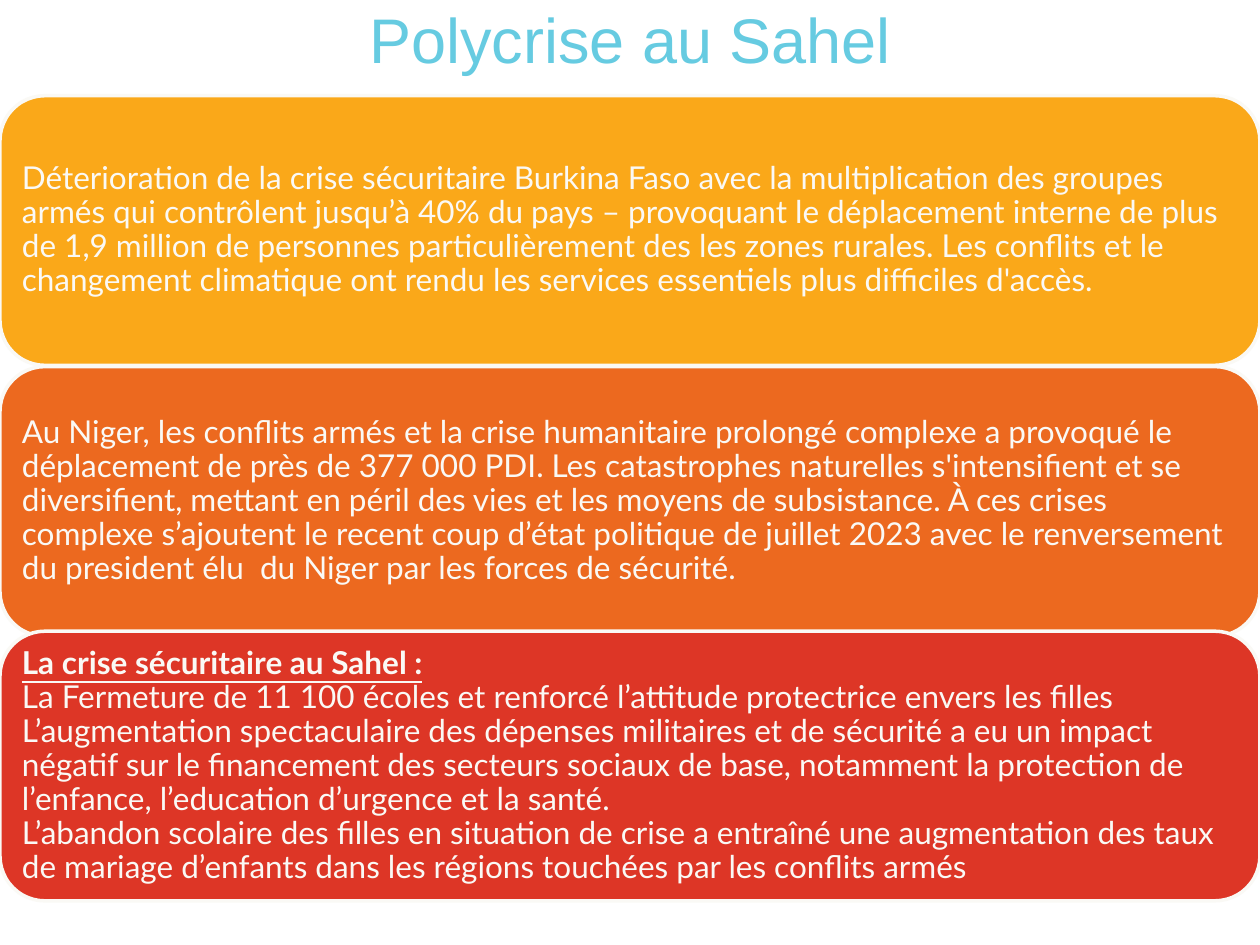
from dataclasses import dataclass

from pptx import Presentation
from pptx.dml.color import RGBColor
from pptx.enum.shapes import MSO_SHAPE
from pptx.enum.text import MSO_ANCHOR, PP_ALIGN
from pptx.util import Inches, Pt


@dataclass(frozen=True)
class Theme:
    title_color: str = "66CBE1"
    light: str = "FAF9F5"
    amber: str = "FAA819"
    orange: str = "EC691F"
    red: str = "DD3626"
    title_font: str = "Arial"
    body_font: str = "Lato"
    title_size: int = 36
    body_size: int = 18
    outline: int = 2


class SlideBuilder:
    def __init__(self, slide, theme):
        self.slide = slide
        self.theme = theme

    def style(self, font, name, size, color):
        font.name = name
        font.size = Pt(size)
        font.color.rgb = RGBColor.from_string(color)

    def title(self, text):
        box = self.slide.shapes.add_textbox(
            Inches(0.74), Inches(-0.16), Inches(8.52), Inches(0.92))
        frame = box.text_frame
        frame.word_wrap = True
        frame.vertical_anchor = MSO_ANCHOR.MIDDLE
        frame.text = text
        heading = frame.paragraphs[0]
        heading.alignment = PP_ALIGN.CENTER
        self.style(heading.runs[0].font, self.theme.title_font,
                   self.theme.title_size, self.theme.title_color)

    def panel(self, top, color, lines, has_heading=False):
        """Draw a full-width rounded panel; a heading is its first line."""
        panel = self.slide.shapes.add_shape(
            MSO_SHAPE.ROUNDED_RECTANGLE,
            Inches(0), Inches(top), Inches(10), Inches(2.14))
        panel.shadow.inherit = False
        panel.fill.solid()
        panel.fill.fore_color.rgb = RGBColor.from_string(color)
        panel.line.color.rgb = RGBColor.from_string(self.theme.light)
        panel.line.width = Pt(self.theme.outline)

        frame = panel.text_frame
        frame.word_wrap = True
        frame.vertical_anchor = MSO_ANCHOR.MIDDLE
        frame.margin_left = frame.margin_right = Inches(0.07)
        frame.margin_top = frame.margin_bottom = Inches(0.07)
        frame.text = "\v".join(lines)
        body = frame.paragraphs[0]
        body.alignment = PP_ALIGN.LEFT
        body.line_spacing = 0.9
        for run in body.runs:
            self.style(run.font, self.theme.body_font,
                       self.theme.body_size, self.theme.light)
        if has_heading:
            heading_font = body.runs[0].font
            heading_font.bold = heading_font.underline = True


BURKINA_FASO = [
    "Déterioration de la crise sécuritaire Burkina Faso avec la multiplication "
    "des groupes armés qui contrôlent jusqu’à 40% du pays – provoquant le "
    "déplacement interne de plus de 1,9 million de personnes particulièrement "
    "des les zones rurales. Les conflits et le changement climatique ont rendu "
    "les services essentiels plus difficiles d'accès.",
]
NIGER = [
    "Au Niger, les conflits armés et la crise humanitaire prolongé complexe a "
    "provoqué le déplacement de près de 377 000 PDI. Les catastrophes "
    "naturelles s'intensifient et se diversifient, mettant en péril des vies "
    "et les moyens de subsistance. À ces crises complexe s’ajoutent le recent "
    "coup d’état politique de juillet 2023 avec le renversement du president "
    "élu  du Niger par les forces de sécurité.",
]
SAHEL = [
    "La crise sécuritaire au Sahel :",
    "La Fermeture de 11 100 écoles et renforcé l’attitude protectrice envers "
    "les filles",
    "L’augmentation spectaculaire des dépenses militaires et de sécurité a eu "
    "un impact négatif sur le financement des secteurs sociaux de base, "
    "notamment la protection de l’enfance, l’education d’urgence et la santé.",
    "L’abandon scolaire des filles en situation de crise a entraîné une "
    "augmentation des taux de mariage d’enfants dans les régions touchées par "
    "les conflits armés",
]


def main():
    deck = Presentation()
    deck.slide_width = Inches(10)
    deck.slide_height = Inches(7.5)
    theme = Theme()
    builder = SlideBuilder(deck.slides.add_slide(deck.slide_layouts[6]), theme)

    builder.title("Polycrise au Sahel")
    builder.panel(0.76, theme.amber, BURKINA_FASO)
    builder.panel(2.91, theme.orange, NIGER)
    builder.panel(5.01, theme.red, SAHEL, has_heading=True)

    deck.save("out.pptx")


if __name__ == "__main__":
    main()
